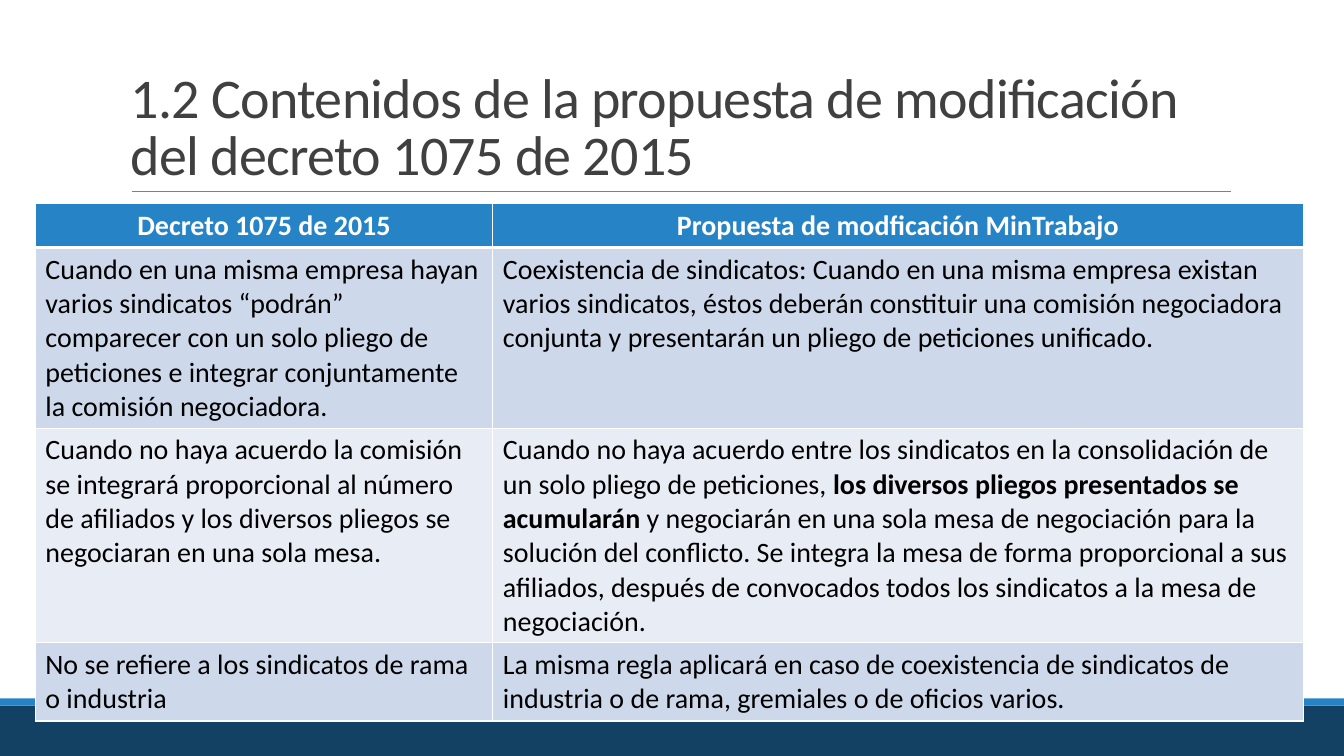
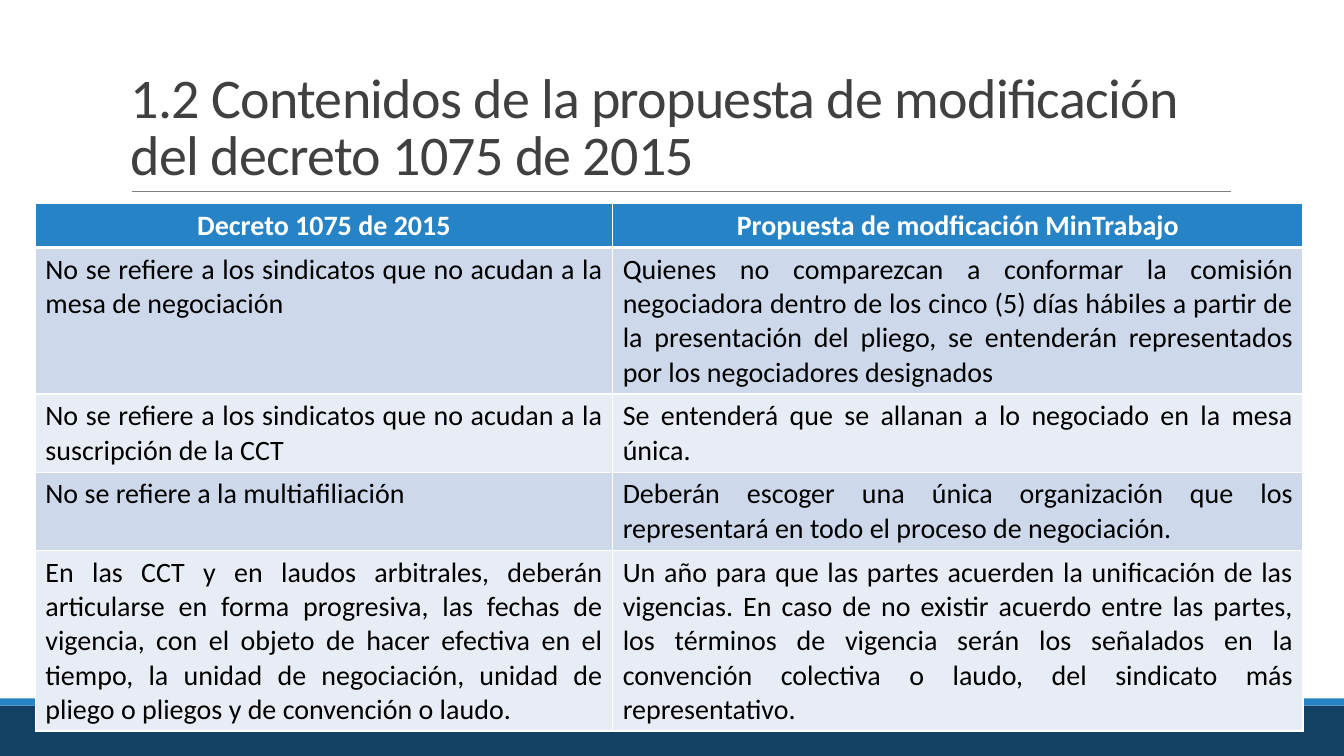
"""Build two slides comparing Decreto 1075 de 2015 with its proposed change."""
from dataclasses import dataclass

from lxml.etree import SubElement as Sub
from pptx import Presentation as Deck
from pptx.dml.color import RGBColor as RGB
from pptx.enum.shapes import MSO_CONNECTOR as Link, MSO_SHAPE as Kind
from pptx.enum.text import MSO_ANCHOR as Anchor, PP_ALIGN as Align
from pptx.oxml.ns import qn
from pptx.util import Cm, Pt

TITLE = "1.2 Contenidos de la propuesta de modificación del decreto 1075 de 2015"
HEAD = ("Decreto 1075 de 2015", "Propuesta de modficación MinTrabajo")
PAGES = [
    {
        "cols": (11.53, 20.42),
        "align": Align.LEFT,
        "lines": (1, 5, 6, 2),
        "rows": [
            ("Cuando en una misma empresa hayan varios sindicatos “podrán” "
             "comparecer con un solo pliego de peticiones e integrar "
             "conjuntamente la comisión negociadora.",
             "Coexistencia de sindicatos: Cuando en una misma empresa existan "
             "varios sindicatos, éstos deberán constituir una comisión "
             "negociadora conjunta y presentarán un pliego de peticiones "
             "unificado."),
            ("Cuando no haya acuerdo la comisión se integrará proporcional al "
             "número de afiliados y los diversos pliegos se negociaran en una "
             "sola mesa.",
             "Cuando no haya acuerdo entre los sindicatos en la consolidación "
             "de un solo pliego de peticiones, **los diversos pliegos "
             "presentados se acumularán** y negociarán en una sola mesa de "
             "negociación para la solución del conflicto. Se integra la mesa "
             "de forma proporcional a sus afiliados, después de convocados "
             "todos los sindicatos a la mesa de negociación."),
            ("No se refiere a los sindicatos de rama o industria",
             "La misma regla aplicará en caso de coexistencia de sindicatos "
             "de industria o de rama, gremiales o de oficios varios."),
        ],
    },
    {
        "cols": (14.55, 17.4),
        "align": Align.JUSTIFY,
        "lines": (1, 4, 2, 2, 5),
        "rows": [
            ("No se refiere a los sindicatos que no acudan a la mesa de "
             "negociación",
             "Quienes no comparezcan a conformar la comisión negociadora "
             "dentro de los cinco (5) días hábiles a partir de la "
             "presentación del pliego, se entenderán representados por los "
             "negociadores designados"),
            ("No se refiere a los sindicatos que no acudan a la suscripción "
             "de la CCT",
             "Se entenderá que se allanan a lo negociado en la mesa única."),
            ("No se refiere a la multiafiliación",
             "Deberán escoger una única organización que los representará en "
             "todo el proceso de negociación."),
            ("En las CCT y en laudos arbitrales, deberán articularse en forma "
             "progresiva, las fechas de vigencia, con el objeto de hacer "
             "efectiva en el tiempo, la unidad de negociación, unidad de "
             "pliego o pliegos y de convención o laudo.",
             "Un año para que las partes acuerden la unificación de las "
             "vigencias. En caso de no existir acuerdo entre las partes, los "
             "términos de vigencia serán los señalados en la convención "
             "colectiva o laudo, del sindicato más representativo."),
        ],
    },
]


@dataclass(frozen=True)
class Theme:
    font: str = "Calibri"
    navy: str = "124163"
    blue: str = "2683C6"
    gray: str = "808080"
    ink: str = "404040"
    black: str = "000000"
    white: str = "FFFFFF"
    bands: tuple = ("CDD9EA", "E8EDF5")
    big: int = 40
    body: int = 20
    thin: int = 1
    thick: int = 3


LOOK = Theme()
WIDE, HIGH = 33.87, 19.05
LINE, PAD = 0.86, 0.25
BANDS = ((17.78, 1.27, LOOK.navy), (17.6, 0.18, LOOK.blue))


def paint(fill, color):
    fill.solid()
    fill.fore_color.rgb = RGB.from_string(color)


def write(para, text, size, color, bold=False):
    for part, words in enumerate(text.split("**")):
        run = para.add_run()
        run.text = words
        style = {"name": LOOK.font, "size": Pt(size),
                 "bold": bold or part % 2 == 1}
        for key, value in style.items():
            setattr(run.font, key, value)
        run.font.color.rgb = RGB.from_string(color)


def frame(slide):
    for top, height, color in BANDS:
        band = slide.shapes.add_shape(
            Kind.RECTANGLE, 0, Cm(top), Cm(WIDE), Cm(height))
        band.shadow.inherit = False
        paint(band.fill, color)
        band.line.fill.background()
    rule = slide.shapes.add_connector(
        Link.STRAIGHT, Cm(3.33), Cm(4.83), Cm(31.01), Cm(4.83))
    rule.line.width = Pt(0.5)
    rule.line.color.rgb = RGB.from_string(LOOK.gray)
    Sub(rule._element.spPr, qn("a:effectLst"))


def title(slide):
    box = slide.shapes.add_textbox(Cm(3.05), Cm(0.79), Cm(27.94), Cm(4.04))
    text = box.text_frame
    text.word_wrap = True
    text.vertical_anchor = Anchor.BOTTOM
    para = text.paragraphs[0]
    para.line_spacing = 0.85
    write(para, TITLE, LOOK.big, LOOK.ink)
    para.runs[0]._r.get_or_add_rPr().set("spc", "-50")


def border(cell, row):
    widths = {"L": LOOK.thin, "R": LOOK.thin,
              "T": LOOK.thick if row == 1 else LOOK.thin,
              "B": LOOK.thick if row == 0 else LOOK.thin}
    props = cell._tc.get_or_add_tcPr()
    for side, width in widths.items():
        edge = Sub(props, qn(f"a:ln{side}"), w=str(Pt(width)))
        Sub(Sub(edge, qn("a:solidFill")), qn("a:srgbClr"), val=LOOK.white)


def table(slide, page):
    rows = [HEAD, *page["rows"]]
    tall = [LINE * count + PAD for count in page["lines"]]
    grid = slide.shapes.add_table(
        len(rows), len(HEAD), Cm(0.89), Cm(5.13),
        Cm(sum(page["cols"])), Cm(sum(tall))).table
    for col, width in zip(grid.columns, page["cols"]):
        col.width = Cm(width)
    for r, texts in enumerate(rows):
        grid.rows[r].height = Cm(tall[r])
        top = r == 0
        for c, text in enumerate(texts):
            cell = grid.cell(r, c)
            border(cell, r)
            paint(cell.fill, LOOK.blue if top else LOOK.bands[(r - 1) % 2])
            para = cell.text_frame.paragraphs[0]
            para.alignment = Align.CENTER if top else page["align"]
            write(para, text, LOOK.body,
                  LOOK.white if top else LOOK.black, top)


def main():
    deck = Deck()
    deck.slide_width, deck.slide_height = Cm(WIDE), Cm(HIGH)
    for page in PAGES:
        slide = deck.slides.add_slide(deck.slide_layouts[6])
        frame(slide)
        title(slide)
        table(slide, page)
    deck.save("out.pptx")


if __name__ == "__main__":
    main()
